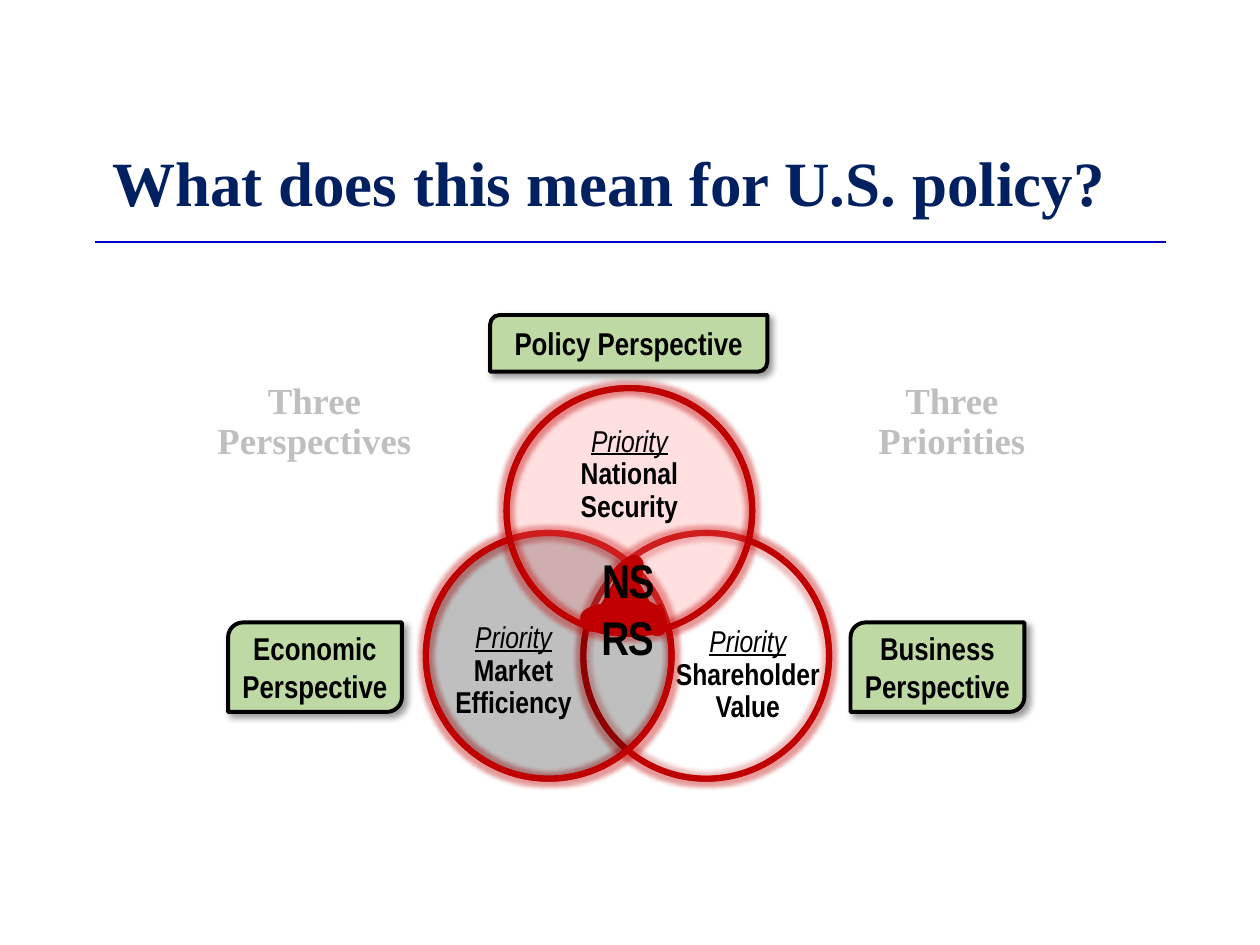
from dataclasses import dataclass

import pptx
import pptx.dml.color
import pptx.enum.shapes
import pptx.enum.text
import pptx.oxml.ns
import pptx.util
from lxml import etree
from pptx.util import Inches

SHAPE = pptx.enum.shapes.MSO_SHAPE
ALIGN = pptx.enum.text.PP_ALIGN
ANCHOR = pptx.enum.text.MSO_ANCHOR


@dataclass(frozen=True)
class Theme:
    serif: str = "Times New Roman"
    narrow: str = "Arial Narrow"
    title: str = "002060"
    rule: str = "0000CC"
    red: str = "C00000"
    green: str = "BED9A3"
    grey: str = "BFBFBF"
    black: str = "000000"
    title_size: float = 36
    heading_size: float = 21
    label_size: float = 18
    priority_size: float = 17.2
    center_size: float = 27


@dataclass(frozen=True)
class Box:
    left: float
    top: float
    width: float
    height: float

    def lengths(self) -> tuple:
        return tuple(Inches(n) for n in (self.left, self.top, self.width, self.height))


@dataclass(frozen=True)
class Priority:
    left: float
    top: float
    fill: str
    opacity: int
    name: str
    text_box: Box
    outline_on_top: bool = False


@dataclass(frozen=True)
class Label:
    text: str
    box: Box


@dataclass(frozen=True)
class Arc:
    left: float
    top: float
    rotation: float
    start: float


THEME = Theme()
DIAMETER = 1.95
PRIORITIES = [
    Priority(4.63, 4.23, "FFFFFF", 35, "Shareholder\vValue", Box(5.15, 4.97, 1.57, 0.78)),
    Priority(3.38, 4.23, "000000", 25, "Market\vEfficiency", Box(3.55, 4.94, 1.05, 0.78)),
    Priority(4.02, 3.08, "FF7C80", 24, "National Security", Box(4.28, 3.38, 1.43, 0.78), True),
]
PERSPECTIVES = [
    Label("Policy Perspective", Box(3.89, 2.5, 2.2, 0.45)),
    Label("Business\vPerspective", Box(6.75, 4.94, 1.38, 0.71)),
    Label("Economic\vPerspective", Box(1.81, 4.94, 1.38, 0.71)),
]
HEADINGS = [
    Label("Three Perspectives", Box(1.5, 3, 1.99, 0.41)),
    Label("Three Priorities", Box(6.56, 3, 1.99, 0.41)),
]
ARCS = [Arc(4.64, 4.81, 0, 112.76), Arc(4.55, 4.63, 121.9, 114.52), Arc(4.74, 4.63, 239.6, 113.78)]


def rgb(color: str):
    return pptx.dml.color.RGBColor.from_string(color)


def add_child(parent, tag: str, **attributes):
    child = etree.SubElement(parent, pptx.oxml.ns.qn(tag))
    for name, value in attributes.items():
        child.set(name, str(value))
    return child


def set_opacity(color_element, percent: int) -> None:
    add_child(color_element, "a:alpha", val=percent * 1000)


def add_effect(shape, tag: str, color: str, **attributes) -> None:
    effects = shape._element.spPr.find(pptx.oxml.ns.qn("a:effectLst"))
    effect = add_child(effects, tag, **attributes)
    set_opacity(add_child(effect, "a:srgbClr", val=color), 40)


def write(frame, text: str, *, font: str, size: float, color: str = THEME.black, bold: bool = True,
          italic: bool = False, underline: bool = False, align=ALIGN.CENTER, anchor=ANCHOR.MIDDLE,
          insets: tuple = (0, 0), line_spacing: float = 1.0, tracking: int = 0,
          append: bool = False) -> None:
    """Write one paragraph; insets are horizontal and vertical, tracking is in 1/100 point."""
    frame.word_wrap = True
    frame.auto_size = pptx.enum.text.MSO_AUTO_SIZE.NONE
    frame.vertical_anchor = anchor
    frame.margin_left = frame.margin_right = Inches(insets[0])
    frame.margin_top = frame.margin_bottom = Inches(insets[1])
    paragraph = frame.add_paragraph() if append else frame.paragraphs[0]
    paragraph.text = text
    paragraph.alignment = align
    paragraph.line_spacing = line_spacing
    for run in paragraph.runs:
        run.font.name = font
        run.font.size = pptx.util.Pt(size)
        run.font.color.rgb = rgb(color)
        run.font.bold, run.font.italic, run.font.underline = bold, italic, underline
        if tracking:
            run._r.get_or_add_rPr().set("spc", str(tracking))


def add_shape(shapes, kind, box: Box, fill: str | None, line: str, line_width: float):
    shape = shapes.add_shape(kind, *box.lengths())
    shape.shadow.inherit = False
    if fill:
        shape.fill.solid()
        shape.fill.fore_color.rgb = rgb(fill)
    else:
        shape.fill.background()
    shape.line.color.rgb = rgb(line)
    shape.line.width = pptx.util.Pt(line_width)
    return shape


def add_priority(slide, priority: Priority) -> None:
    shapes = slide.shapes.add_group_shape().shapes
    box = Box(priority.left, priority.top, DIAMETER, DIAMETER)
    fills = [priority.fill, None] if priority.outline_on_top else [None, priority.fill]
    for fill in fills:
        circle = add_shape(shapes, SHAPE.OVAL, box, fill, THEME.red, 3.5)
        if fill:
            color = circle._element.spPr.find(pptx.oxml.ns.qn("a:solidFill"))[0]
            set_opacity(color, priority.opacity)
        else:
            add_effect(circle, "a:glow", THEME.red, rad=pptx.util.Pt(5))
    frame = shapes.add_textbox(*priority.text_box.lengths()).text_frame
    style = dict(font=THEME.narrow, size=THEME.priority_size, line_spacing=0.9)
    write(frame, "Priority", bold=False, italic=True, underline=True, **style)
    write(frame, priority.name, append=True, **style)


def add_perspective(slide, label: Label) -> None:
    shape = add_shape(slide.shapes, SHAPE.ROUND_2_DIAG_RECTANGLE, label.box,
                      THEME.green, THEME.black, 2.25)
    add_effect(shape, "a:outerShdw", THEME.black, blurRad=pptx.util.Pt(4), dist=pptx.util.Pt(3),
               dir=45 * 60000, algn="tl", rotWithShape=0)
    write(shape.text_frame, label.text, font=THEME.narrow, size=THEME.label_size,
          insets=(0.07, 0.04))


def add_heading(slide, label: Label) -> None:
    frame = slide.shapes.add_textbox(*label.box.lengths()).text_frame
    write(frame, label.text, font=THEME.serif, size=THEME.heading_size, color=THEME.grey,
          anchor=ANCHOR.TOP, insets=(0.08, 0.04), line_spacing=0.9)


def add_center(slide) -> None:
    """Draw the curved triangle where the three circles meet."""
    shapes = slide.shapes.add_group_shape().shapes
    add_shape(shapes, SHAPE.ISOSCELES_TRIANGLE, Box(4.67, 4.47, 0.6, 0.53),
              THEME.red, THEME.red, 2)
    for arc in ARCS:
        shape = add_shape(shapes, SHAPE.ARC, Box(arc.left, arc.top, 0.66, 0.19),
                          THEME.red, THEME.red, 5.25)
        for index, degrees in enumerate((arc.start, 210.78)):
            shape.adjustments[index] = degrees * 0.6
        shape.rotation = arc.rotation
        shape._element.spPr.get_or_add_xfrm().set("flipV", "1")
    frame = shapes.add_textbox(*Box(4.72, 4.71, 0.52, 0.23).lengths()).text_frame
    write(frame, "NSRS", font=THEME.narrow, size=THEME.center_size, tracking=-80)


def add_title(slide) -> None:
    title = slide.shapes.title
    title.left, title.top, title.width, title.height = Box(0.81, 1.14, 9.19, 0.64).lengths()
    write(title.text_frame, "What does this mean for U.S. policy?", font=THEME.serif,
          size=THEME.title_size, color=THEME.title, align=ALIGN.LEFT, anchor=ANCHOR.BOTTOM,
          insets=(0.08, 0.04))
    rule = slide.shapes.add_connector(pptx.enum.shapes.MSO_CONNECTOR.STRAIGHT, Inches(0.75),
                                      Inches(1.92), Inches(9.25), Inches(1.92))
    rule.line.color.rgb = rgb(THEME.rule)
    rule.line.width = pptx.util.Pt(0.75)
    add_child(rule._element.spPr, "a:effectLst")


def main() -> None:
    presentation = pptx.Presentation()
    presentation.slide_width, presentation.slide_height = Inches(10), Inches(7.5)
    slide = presentation.slides.add_slide(presentation.slide_layouts[5])
    add_title(slide)
    for draw, items in ((add_priority, PRIORITIES), (add_perspective, PERSPECTIVES),
                        (add_heading, HEADINGS)):
        for item in items:
            draw(slide, item)
    add_center(slide)
    presentation.save("out.pptx")


if __name__ == "__main__":
    main()
